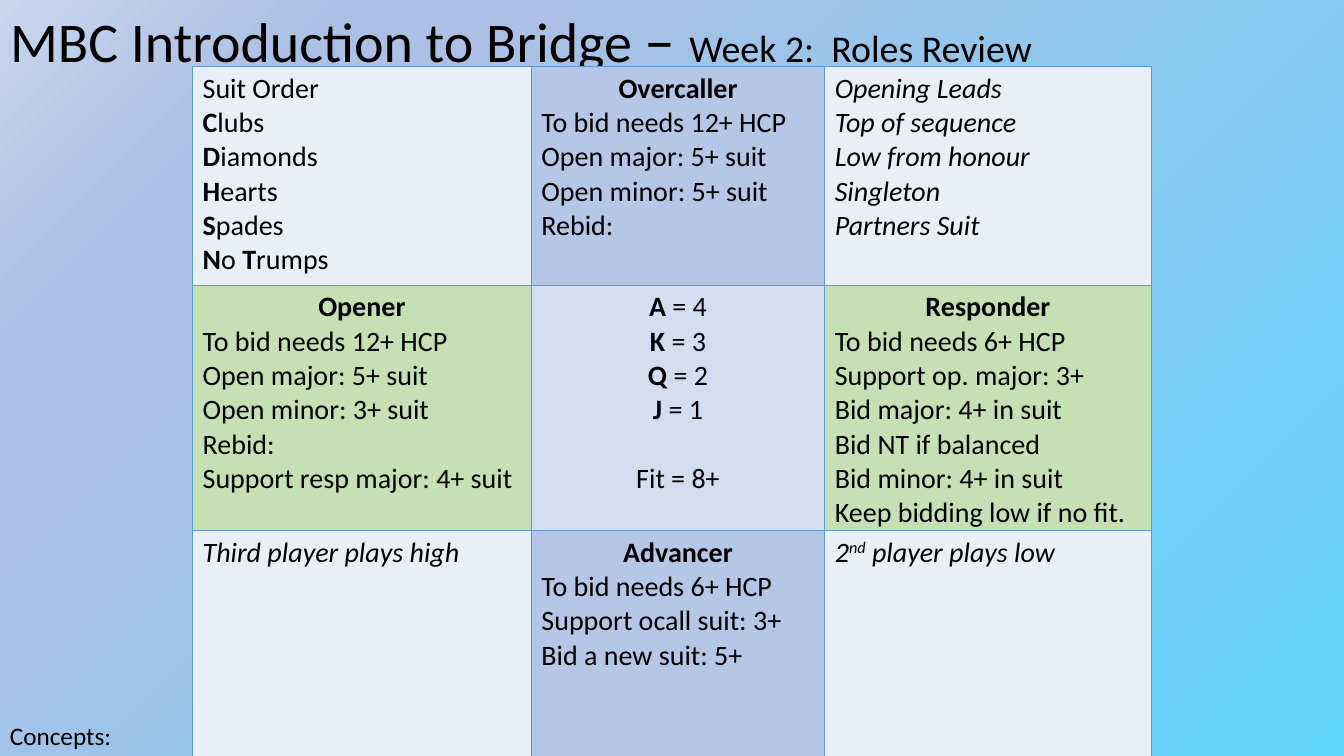
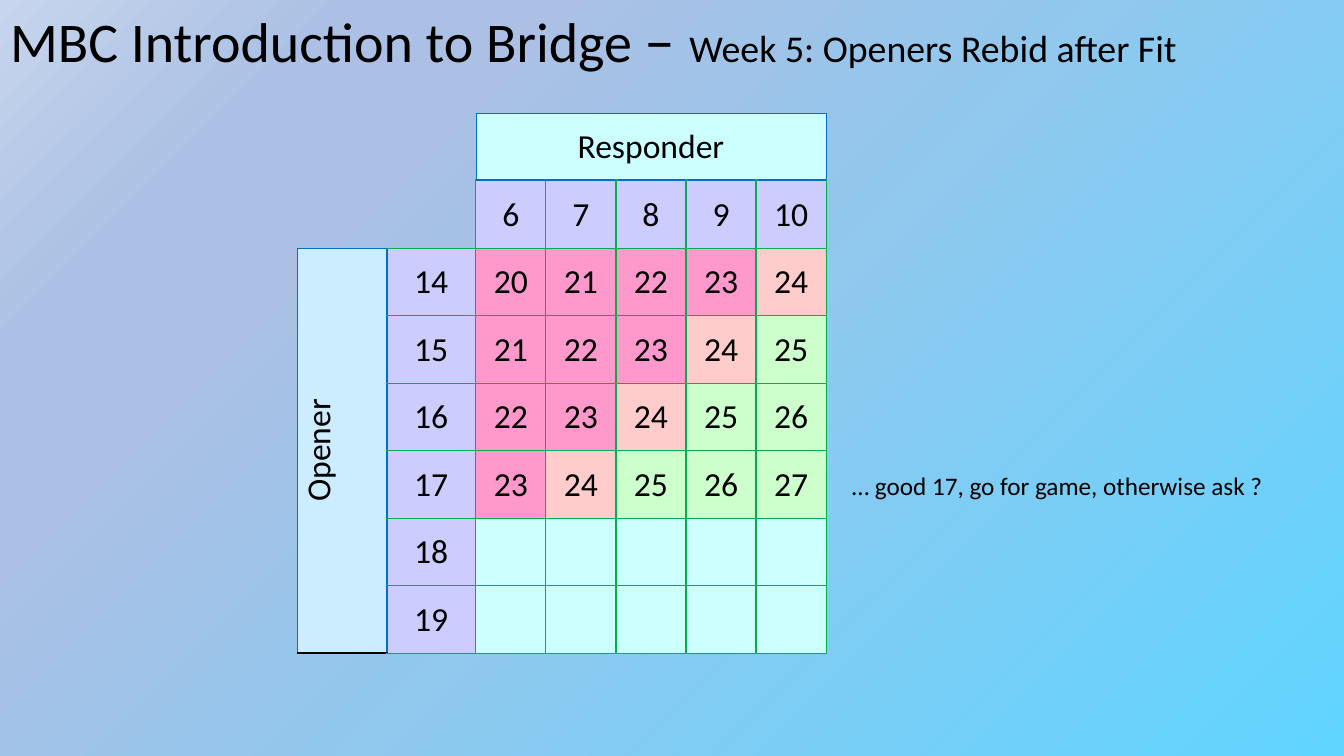
from pptx import Presentation
from pptx.dml.color import RGBColor
from pptx.enum.text import MSO_ANCHOR, MSO_AUTO_SIZE, PP_ALIGN
from pptx.oxml import parse_xml
from pptx.oxml.ns import nsdecls
from pptx.util import Inches, Pt

FONT = "Calibri"
BLACK = RGBColor(0, 0, 0)
STEEL = RGBColor(0x5B, 0x9B, 0xD5)
BLUE = RGBColor(0x00, 0x70, 0xC0)
GREEN = RGBColor(0x00, 0xB0, 0x50)
PALE = RGBColor(0xEA, 0xEF, 0xF7)
CENTRE = RGBColor(0xD2, 0xDE, 0xEF)
DEFENDER = RGBColor(0xB4, 0xC7, 0xE7)
DECLARER = RGBColor(0xC5, 0xE0, 0xB4)
AQUA = RGBColor(0xCC, 0xFF, 0xFF)
SKY = RGBColor(0xCC, 0xEC, 0xFF)
LILAC = RGBColor(0xCC, 0xCC, 0xFF)
PINK = RGBColor(0xFF, 0x99, 0xCC)
PEACH = RGBColor(0xFF, 0xCC, 0xCC)
MINT = RGBColor(0xCC, 0xFF, 0xCC)
SKY_DEEP = RGBColor(0x60, 0xD5, 0xFF)
HAZE = RGBColor(0xAB, 0xC0, 0xE4)
MIST = RGBColor(0xC7, 0xD5, 0xED)
BACKDROP = [(0, SKY_DEEP), (74, HAZE), (83, HAZE), (100, MIST)]

W, H = 13.33, 7.5
NO_STYLE = "{2D5ABB26-0587-4C30-8999-92F81FD0307C}"
COURSE = "MBC Introduction to Bridge "

# Markup-free names keep the marks short: *bold*, ^superscript^.
ROLE_COLS = [3.36, 2.91, 3.24]
ROLE_ROWS = [2.17, 2.42, 2.25]
ROLES = [
    [
        (PALE, ["Suit Order", "*C*lubs", "*D*iamonds", "*H*earts", "*S*pades",
                "*N*o *T*rumps"]),
        (DEFENDER, ["*Overcaller*", "To bid needs 12+ HCP", "Open major: 5+ suit",
                    "Open minor: 5+ suit", "Rebid:"]),
        (PALE, ["Opening Leads", "Top of sequence", "Low from honour", "Singleton",
                "Partners Suit"]),
    ],
    [
        (DECLARER, ["*Opener*", "To bid needs 12+ HCP", "Open major: 5+ suit",
                    "Open minor: 3+ suit", "Rebid:", "Support resp major: 4+ suit"]),
        (CENTRE, ["*A* = 4", "*K* = 3", "*Q* = 2", "*J* = 1", "Fit = 8+"]),
        (DECLARER, ["*Responder*", "To bid needs 6+ HCP", "Support op. major: 3+",
                    "Bid major: 4+ in suit", "Bid NT if balanced",
                    "Bid minor: 4+ in suit", "Keep bidding low if no fit."]),
    ],
    [
        (PALE, ["Third player plays high"]),
        (DEFENDER, ["*Advancer*", "To bid needs 6+ HCP", "Support ocall suit: 3+",
                    "Bid a new suit: 5+"]),
        (PALE, ["2^nd^ player plays low"]),
    ],
]
PLAY_TIPS = [(0, 2), (2, 0), (2, 2)]

RESPONDER = [6, 7, 8, 9, 10]
OPENER = [14, 15, 16, 17, 18, 19]
LAST_SHOWN, ASK = 17, 24


def set_backdrop(prs):
    master = prs.slide_master
    master.background.fill.solid()
    bg_pr = master.element.cSld.bg[0]
    stops = "".join(f'<a:gs pos="{pos * 1000}"><a:srgbClr val="{color}"/></a:gs>'
                    for pos, color in BACKDROP)
    bg_pr.replace(bg_pr[0], parse_xml(
        f'<a:gradFill {nsdecls("a")} rotWithShape="1"><a:gsLst>{stops}</a:gsLst>'
        '<a:path path="circle"><a:fillToRect l="100000" t="100000"/></a:path>'
        '<a:tileRect r="-100000" b="-100000"/></a:gradFill>'))


def set_font(p, size):
    p.font.name, p.font.size, p.font.color.rgb = FONT, Pt(size), BLACK


def add_titled_slide(prs, topic):
    s = prs.slides.add_slide(prs.slide_layouts[5])
    sp = s.shapes.title
    sp.left, sp.top, sp.width, sp.height = 0, 0, Inches(W), Inches(0.84)
    tf = sp.text_frame
    tf.auto_size, tf.vertical_anchor = MSO_AUTO_SIZE.NONE, MSO_ANCHOR.MIDDLE
    p = tf.paragraphs[0]
    p.alignment, p.line_spacing = PP_ALIGN.LEFT, 0.9
    set_font(p, 40)
    for text, size in [(COURSE, 40), ("– ", 44), (topic, 27)]:
        r = p.add_run()
        r.text, r.font.size = text, Pt(size)
    return s


def add_note(s, text, left, top, width):
    tf = s.shapes.add_textbox(Inches(left), Inches(top), Inches(width),
                              Inches(0.4)).text_frame
    tf.word_wrap, tf.auto_size = False, MSO_AUTO_SIZE.SHAPE_TO_FIT_TEXT
    tf.text = text
    set_font(tf.paragraphs[0], 18)


def add_grid(s, left, top, cols, rows):
    table = s.shapes.add_table(len(rows), len(cols), Inches(left), Inches(top),
                               Inches(sum(cols)), Inches(sum(rows))).table
    table.first_row = table.horz_banding = False
    table._tbl.tblPr[0].text = NO_STYLE
    for col, width in zip(table.columns, cols):
        col.width = Inches(width)
    for row, height in zip(table.rows, rows):
        row.height = Inches(height)
    return table


def set_borders(cell, **edges):
    tc_pr = cell._tc.get_or_add_tcPr()
    for side in "LRTB":
        if side in edges:
            color, width = edges[side]
            tc_pr.append(parse_xml(
                f'<a:ln{side} {nsdecls("a")} w="{Pt(width)}"><a:solidFill>'
                f'<a:srgbClr val="{color}"/></a:solidFill></a:ln{side}>'))


def set_fill(cell, color):
    cell.fill.solid()
    cell.fill.fore_color.rgb = color


def add_marked_runs(p, text):
    for i, part in enumerate(text.split("*")):
        for j, bit in enumerate(part.split("^")):
            if bit:
                r = p.add_run()
                r.text = bit
                if i % 2:
                    r.font.bold = True
                if j % 2:
                    r.font._element.set("baseline", "30000")


def fill_role(cell, color, lines, italic, centred):
    set_borders(cell, **{side: (STEEL, 1) for side in "LRTB"})
    set_fill(cell, color)
    tf = cell.text_frame
    for i, line in enumerate(lines):
        p = tf.add_paragraph() if i else tf.paragraphs[0]
        set_font(p, 20)
        p.font.italic = italic
        heading = line.startswith("*") and line.endswith("*")
        p.alignment = PP_ALIGN.CENTER if centred or heading else PP_ALIGN.LEFT
        if line.startswith("Fit"):
            p.space_before = Pt(24.4)
        add_marked_runs(p, line)


def fill_count(cell, color, value, **edges):
    borders = dict(L=(GREEN, 1), R=(GREEN, 1), T=(GREEN, 0.5), B=(GREEN, 0.5))
    set_borders(cell, **{**borders, **edges})
    set_fill(cell, color)
    if value is None:
        return
    cell.margin_left = cell.margin_right = cell.margin_top = Inches(0.01)
    cell.margin_bottom = 0
    cell.vertical_anchor = MSO_ANCHOR.MIDDLE
    p = cell.text_frame.paragraphs[0]
    p.text, p.alignment = str(value), PP_ALIGN.CENTER
    set_font(p, 24)


def build_roles(prs):
    s = add_titled_slide(prs, "Week 2:  Roles Review")
    add_note(s, "Concepts:", 0, 7.1, 1.22)
    table = add_grid(s, (W - sum(ROLE_COLS)) / 2, H - sum(ROLE_ROWS),
                     ROLE_COLS, ROLE_ROWS)
    for i, row in enumerate(ROLES):
        for j, (color, lines) in enumerate(row):
            fill_role(table.cell(i, j), color, lines, (i, j) in PLAY_TIPS,
                      color == CENTRE)


def build_rebids(prs):
    s = add_titled_slide(prs, "Week 5: Openers Rebid after Fit")
    table = add_grid(s, 2.95, 1.12, [0.885] * 2 + [0.695] * len(RESPONDER),
                     [0.67] * (2 + len(OPENER)))
    thin, thick = (BLUE, 0.5), (BLUE, 1.5)

    table.cell(0, 2).merge(table.cell(0, 6))
    for j, count in enumerate(RESPONDER, 2):
        fill_count(table.cell(0, j), AQUA, "Responder" if j == 2 else None,
                   L=thin, R=thin, T=thin, B=thick)
        fill_count(table.cell(1, j), LILAC, count, T=thick)

    table.cell(2, 0).merge(table.cell(7, 0))
    for i, points in enumerate(OPENER, 2):
        fill_count(table.cell(i, 0), SKY, "Opener" if i == 2 else None,
                   L=thin, T=thin, R=thick, B=(BLACK, 1.5))
        fill_count(table.cell(i, 1), LILAC, points, L=thick)
        for j, count in enumerate(RESPONDER, 2):
            total = points + count
            if points > LAST_SHOWN:
                color, total = AQUA, None
            else:
                color = PINK if total < ASK else PEACH if total == ASK else MINT
            fill_count(table.cell(i, j), color, total)
    table.cell(2, 0)._tc.get_or_add_tcPr().set("vert", "vert270")
    add_note(s, "… good 17, go for game, otherwise ask ?", 8.35, 4.62, 4.32)


def main():
    prs = Presentation()
    prs.slide_width, prs.slide_height = Inches(W), Inches(H)
    set_backdrop(prs)
    build_roles(prs)
    build_rebids(prs)
    prs.save("out.pptx")


if __name__ == "__main__":
    main()
